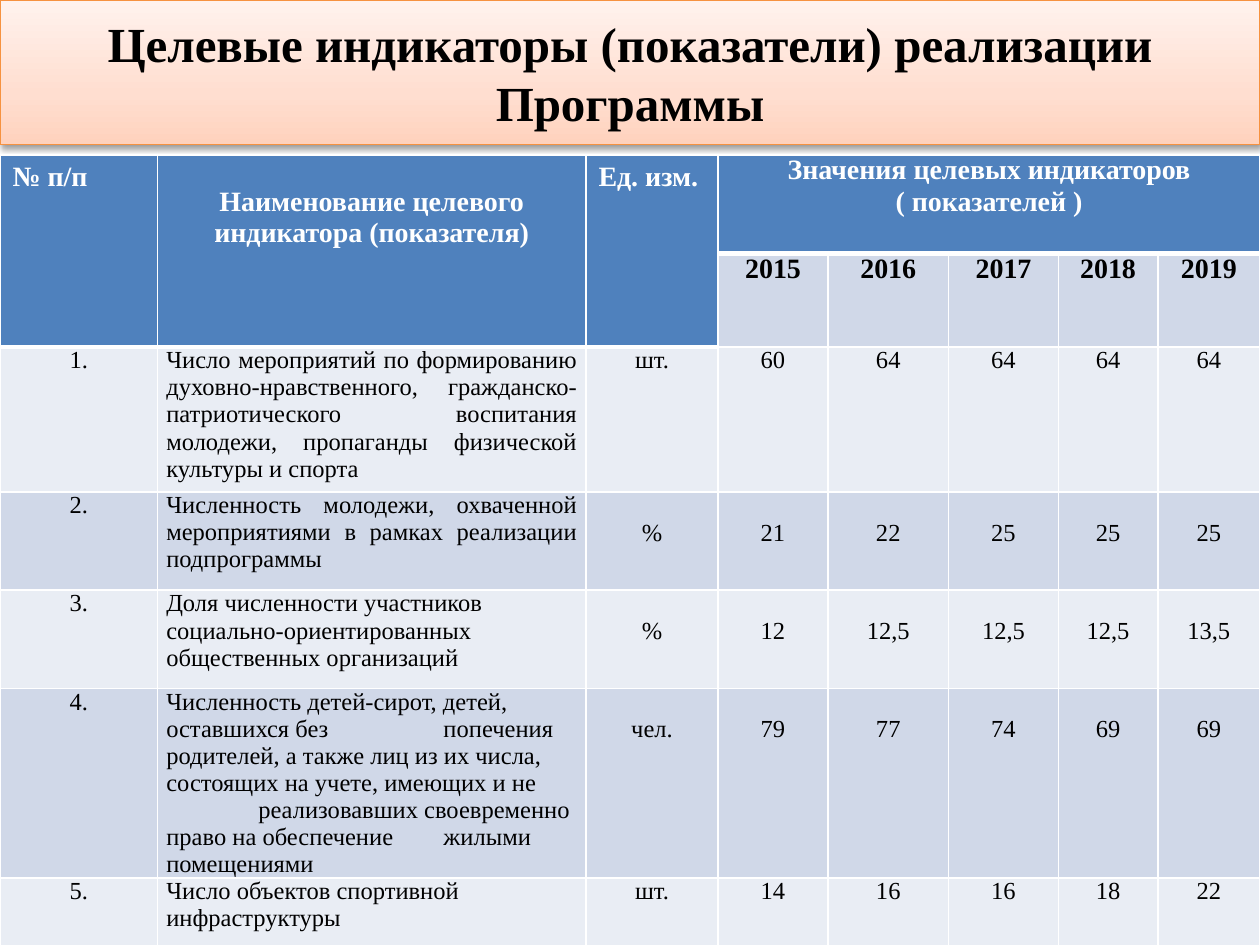
from pptx import Presentation
from pptx.dml.color import RGBColor
from pptx.enum.text import MSO_ANCHOR, PP_ALIGN
from pptx.oxml import parse_xml
from pptx.util import Inches, Pt

LEFT, MID, JUST = PP_ALIGN.LEFT, PP_ALIGN.CENTER, PP_ALIGN.JUSTIFY
MIDDLE = MSO_ANCHOR.MIDDLE
NS = 'xmlns:a="http://schemas.openxmlformats.org/drawingml/2006/main"'
THEME = {
    "font": "Times New Roman", "title": 28, "head": 16, "body": 14,
    "ink": "000000", "white": "FFFFFF", "blue": "4F81BD",
    "dark": "D0D8E8", "pale": "E9EDF4", "edge": "F69240",
    "glow": [(0, "FFD2BD"), (35, "FFDED0"), (100, "FFF2ED")],
}
COLS = [1.25, 3.4, 1.05, 0.87, 0.96, 0.87, 0.79, 0.81]
ROWS = [0.78, 0.74, 1.15, 0.78, 0.78, 1.5, 0.78]
YEARS = ["2015", "2016", "2017", "2018", "2019"]
# name, its alignment, unit, yearly values, whether values start one line lower
DATA = [
    ("Число мероприятий по формированию духовно-нравственного, "
     "гражданско-патриотического воспитания молодежи, пропаганды "
     "физической культуры и спорта",
     JUST, "шт.", ["60", "64", "64", "64", "64"], False),
    ("Численность молодежи, охваченной мероприятиями в рамках "
     "реализации подпрограммы",
     JUST, "%", ["21", "22", "25", "25", "25"], True),
    ("Доля численности участников социально-ориентированных "
     "общественных организаций",
     LEFT, "%", ["12", "12,5", "12,5", "12,5", "13,5"], True),
    ("Численность детей-сирот, детей, оставшихся без\tпопечения "
     "родителей, а также лиц из их числа, состоящих на учете, "
     "имеющих и не\v\tреализовавших своевременно право на "
     "обеспечение\tжилыми помещениями",
     LEFT, "чел.", ["79", "77", "74", "69", "69"], True),
    ("Число объектов спортивной инфраструктуры",
     LEFT, "шт.", ["14", "16", "16", "18", "22"], False),
]


def style(frame, size, color, bold, align):
    for para in frame.paragraphs:
        para.alignment = align
        for run in para.runs:
            font = run.font
            font.name, font.size, font.bold = THEME["font"], Pt(size), bold
            font.color.rgb = RGBColor.from_string(color)


def write(cell, text, fill, size, color, bold=False, align=MID, top=0, side=0.07):
    cell.margin_left = cell.margin_right = Inches(side)
    cell.margin_top, cell.margin_bottom = Inches(top), 0
    cell.fill.solid()
    cell.fill.fore_color.rgb = RGBColor.from_string(fill)
    cell.text_frame.text = text
    style(cell.text_frame, size, color, bold, align)


deck = Presentation()
deck.slide_width, deck.slide_height = Inches(10), Inches(7.5)
slide = deck.slides.add_slide(deck.slide_layouts[5])

# Title band with gradient and soft shadow
title = slide.shapes.title
title.left, title.top = 0, 0
title.width, title.height = deck.slide_width, Inches(1.15)
stops = "".join(f'<a:gs pos="{pos * 1000}"><a:srgbClr val="{tone}"/></a:gs>'
                for pos, tone in THEME["glow"])
props = title._element.spPr
props.append(parse_xml(f'<a:gradFill {NS} rotWithShape="1"><a:gsLst>{stops}</a:gsLst>'
                       '<a:lin ang="16200000" scaled="1"/></a:gradFill>'))
title.line.color.rgb = RGBColor.from_string(THEME["edge"])
title.line.width = Pt(0.75)
props.append(parse_xml(
    f'<a:effectLst {NS}><a:outerShdw blurRad="40000" dist="20000" dir="5400000" '
    'rotWithShape="0"><a:srgbClr val="000000"><a:alpha val="38000"/></a:srgbClr>'
    '</a:outerShdw></a:effectLst>'))
title.text_frame.text = "Целевые индикаторы (показатели) реализации Программы"
title.text_frame.word_wrap = True
title.text_frame.vertical_anchor = MIDDLE
style(title.text_frame, THEME["title"], THEME["ink"], True, MID)

# Table grid
table = slide.shapes.add_table(len(ROWS), len(COLS), 0, Inches(1.23),
                               Inches(sum(COLS)), Inches(sum(ROWS))).table
for col, width in zip(table.columns, COLS):
    col.width = Inches(width)
for row, height in zip(table.rows, ROWS):
    row.height = Inches(height)

# Header: three tall cells and one wide cell above the years
for num in range(3):
    table.cell(0, num).merge(table.cell(1, num))
table.cell(0, 3).merge(table.cell(0, 7))
heads = [
    ("№ п/п", LEFT, 0.05, 0.1),
    ("Наименование целевого индикатора (показателя)", MID, 0.25, 0.07),
    ("Ед. изм.", LEFT, 0.05, 0.1),
    ("Значения целевых индикаторов\n( показателей )", MID, 0, 0.07),
]
for num, (text, align, top, side) in enumerate(heads):
    cell = table.cell(0, num)
    cell._tc.get_or_add_tcPr().append(parse_xml(
        f'<a:lnB {NS} w="38100"><a:solidFill><a:srgbClr val="{THEME["white"]}"/>'
        '</a:solidFill></a:lnB>'))
    write(cell, text, THEME["blue"], THEME["head"], THEME["white"], True,
          align, top, side)
for num, year in enumerate(YEARS, 3):
    write(table.cell(1, num), year, THEME["dark"], THEME["head"], THEME["ink"], True)

# Indicator rows in alternating bands
for num, (name, align, unit, values, lower) in enumerate(DATA, 1):
    fill = THEME["pale"] if num % 2 else THEME["dark"]
    for col, text in enumerate([f"{num}.", name, unit, *values]):
        write(table.cell(num + 1, col), text, fill, THEME["body"], THEME["ink"],
              align=align if col == 1 else MID,
              top=0.22 if lower and col > 1 else 0)

# Tab stops for the gaps inside the fourth name
para = table.cell(5, 1).text_frame.paragraphs[0]
para._p.get_or_add_pPr().append(parse_xml(
    f'<a:tabLst {NS}><a:tab pos="{Inches(0.73)}" algn="l"/>'
    f'<a:tab pos="{Inches(2.2)}" algn="l"/></a:tabLst>'))

deck.save("out.pptx")
